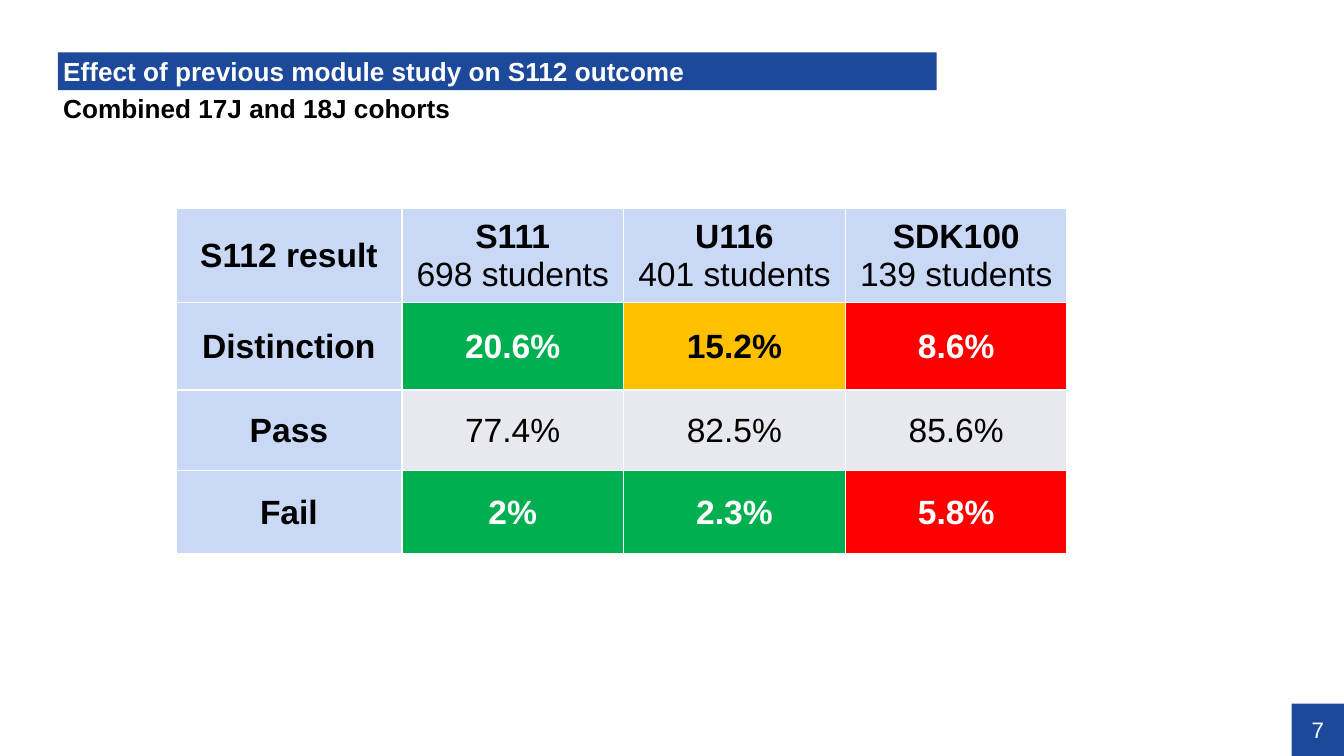
from dataclasses import dataclass

from lxml import etree
from pptx import Presentation
from pptx.dml.color import RGBColor
from pptx.enum.shapes import MSO_SHAPE
from pptx.enum.text import MSO_ANCHOR, MSO_AUTO_SIZE, PP_ALIGN
from pptx.oxml.ns import qn
from pptx.util import Inches, Pt

RECTANGLE = MSO_SHAPE.RECTANGLE
MIDDLE = MSO_ANCHOR.MIDDLE
NO_AUTOFIT = MSO_AUTO_SIZE.NONE
LEFT, CENTER = PP_ALIGN.LEFT, PP_ALIGN.CENTER
TITLE_ONLY_LAYOUT = 5
SLIDE_WIDTH = 10
SLIDE_HEIGHT = SLIDE_WIDTH * 9 / 16
BADGE_SIZE = 0.39
FONT = "Arial"
COLORS = {
    "blue": "1D499B",
    "header": "C8D8F5",
    "neutral": "E8E9EF",
    "good": "00B050",
    "medium": "FFC000",
    "poor": "FF0000",
    "black": "000000",
    "white": "FFFFFF",
}


@dataclass(frozen=True)
class TextRun:
    text: str
    size: int
    color: str = "black"
    bold: bool = True


@dataclass(frozen=True)
class Module:
    code: str
    students: str


@dataclass(frozen=True)
class Result:
    label: str
    values: tuple[str, ...]
    ratings: tuple[str, ...]


MODULES = (
    Module("S111", "698 students"),
    Module("U116", "401 students"),
    Module("SDK100", "139 students"),
)
RESULTS = (
    Result("Distinction", ("20.6%", "15.2%", "8.6%"), ("good", "medium", "poor")),
    Result("Pass", ("77.4%", "82.5%", "85.6%"), ("neutral", "neutral", "neutral")),
    Result("Fail", ("2%", "2.3%", "5.8%"), ("good", "good", "poor")),
)
RATING_TEXT = {"good": "white", "medium": "black", "poor": "white", "neutral": "black"}
COLUMN_WIDTHS = (1.68, 1.65, 1.65, 1.65)
ROW_HEIGHTS = (0.7, 0.65, 0.6, 0.62)


def rgb(name: str) -> RGBColor:
    return RGBColor.from_string(COLORS[name])


def write_lines(text_frame, lines: list[TextRun], alignment, spacing: float = 1.0) -> None:
    for index, line in enumerate(lines):
        paragraph = text_frame.paragraphs[0] if index == 0 else text_frame.add_paragraph()
        paragraph.alignment = alignment
        paragraph.line_spacing = spacing
        paragraph.space_before = Pt(0)
        run = paragraph.add_run()
        run.text = line.text
        run.font.name = FONT
        run.font.size = Pt(line.size)
        run.font.bold = line.bold
        run.font.color.rgb = rgb(line.color)


def place(shape, left: float, top: float, width: float, height: float) -> None:
    shape.left, shape.top = Inches(left), Inches(top)
    shape.width, shape.height = Inches(width), Inches(height)


def set_frame(text_frame, left_inset: float, top_inset: float) -> None:
    text_frame.word_wrap = True
    text_frame.auto_size = NO_AUTOFIT
    text_frame.vertical_anchor = MIDDLE
    text_frame.margin_left = Inches(left_inset)
    text_frame.margin_top = Inches(top_inset)
    text_frame.margin_right = text_frame.margin_bottom = Inches(0)


def fill_shape(shape, color: str) -> None:
    shape.fill.solid()
    shape.fill.fore_color.rgb = rgb(color)


def add_headings(slide) -> None:
    title = slide.shapes.title
    place(title, 0.43, 0.39, 6.54, 0.28)
    fill_shape(title, "blue")
    subtitle = slide.shapes.add_textbox(Inches(0.43), Inches(0.67), Inches(8.69), Inches(0.28))
    headings = (
        (title, TextRun("Effect of previous module study on S112 outcome", 14, "white")),
        (subtitle, TextRun("Combined 17J and 18J cohorts", 14)),
    )
    for shape, line in headings:
        set_frame(shape.text_frame, 0.04, 0.02)
        write_lines(shape.text_frame, [line], LEFT, 0.9)


def add_page_number(slide, number: str) -> None:
    badge = slide.shapes.add_shape(
        RECTANGLE, Inches(SLIDE_WIDTH - BADGE_SIZE), Inches(SLIDE_HEIGHT - BADGE_SIZE),
        Inches(BADGE_SIZE), Inches(BADGE_SIZE),
    )
    badge.shadow.inherit = False
    fill_shape(badge, "blue")
    badge.line.fill.background()
    set_frame(badge.text_frame, 0, 0)
    write_lines(badge.text_frame, [TextRun(number, 12, "white", False)], CENTER)


def format_cell(cell, lines: list[TextRun], fill: str) -> None:
    properties = cell._tc.get_or_add_tcPr()
    for side in ("a:lnL", "a:lnR", "a:lnT", "a:lnB"):
        border = etree.SubElement(properties, qn(side), w=str(Pt(1)))
        solid = etree.SubElement(border, qn("a:solidFill"))
        etree.SubElement(solid, qn("a:srgbClr"), val=COLORS["white"])
    cell.fill.solid()
    cell.fill.fore_color.rgb = rgb(fill)
    cell.vertical_anchor = MIDDLE
    cell.margin_left = cell.margin_right = cell.margin_top = Inches(0.01)
    cell.margin_bottom = Inches(0)
    write_lines(cell.text_frame, lines, CENTER)


def add_results_table(slide) -> None:
    table = slide.shapes.add_table(
        len(ROW_HEIGHTS), len(COLUMN_WIDTHS), Inches(1.31), Inches(1.55),
        Inches(sum(COLUMN_WIDTHS)), Inches(sum(ROW_HEIGHTS)),
    ).table
    for column, width in zip(table.columns, COLUMN_WIDTHS):
        column.width = Inches(width)
    for row, height in zip(table.rows, ROW_HEIGHTS):
        row.height = Inches(height)

    format_cell(table.cell(0, 0), [TextRun("S112 result", 18)], "header")
    for column, module in enumerate(MODULES, start=1):
        lines = [TextRun(module.code, 18), TextRun(module.students, 18, bold=False)]
        format_cell(table.cell(0, column), lines, "header")
    for row, result in enumerate(RESULTS, start=1):
        format_cell(table.cell(row, 0), [TextRun(result.label, 18)], "header")
        for column, (value, rating) in enumerate(zip(result.values, result.ratings), start=1):
            line = TextRun(value, 18, RATING_TEXT[rating], rating != "neutral")
            format_cell(table.cell(row, column), [line], rating)


def main() -> None:
    presentation = Presentation()
    presentation.slide_width = Inches(SLIDE_WIDTH)
    presentation.slide_height = Inches(SLIDE_HEIGHT)
    slide = presentation.slides.add_slide(presentation.slide_layouts[TITLE_ONLY_LAYOUT])
    add_headings(slide)
    add_page_number(slide, "7")
    add_results_table(slide)
    presentation.save("out.pptx")


if __name__ == "__main__":
    main()
